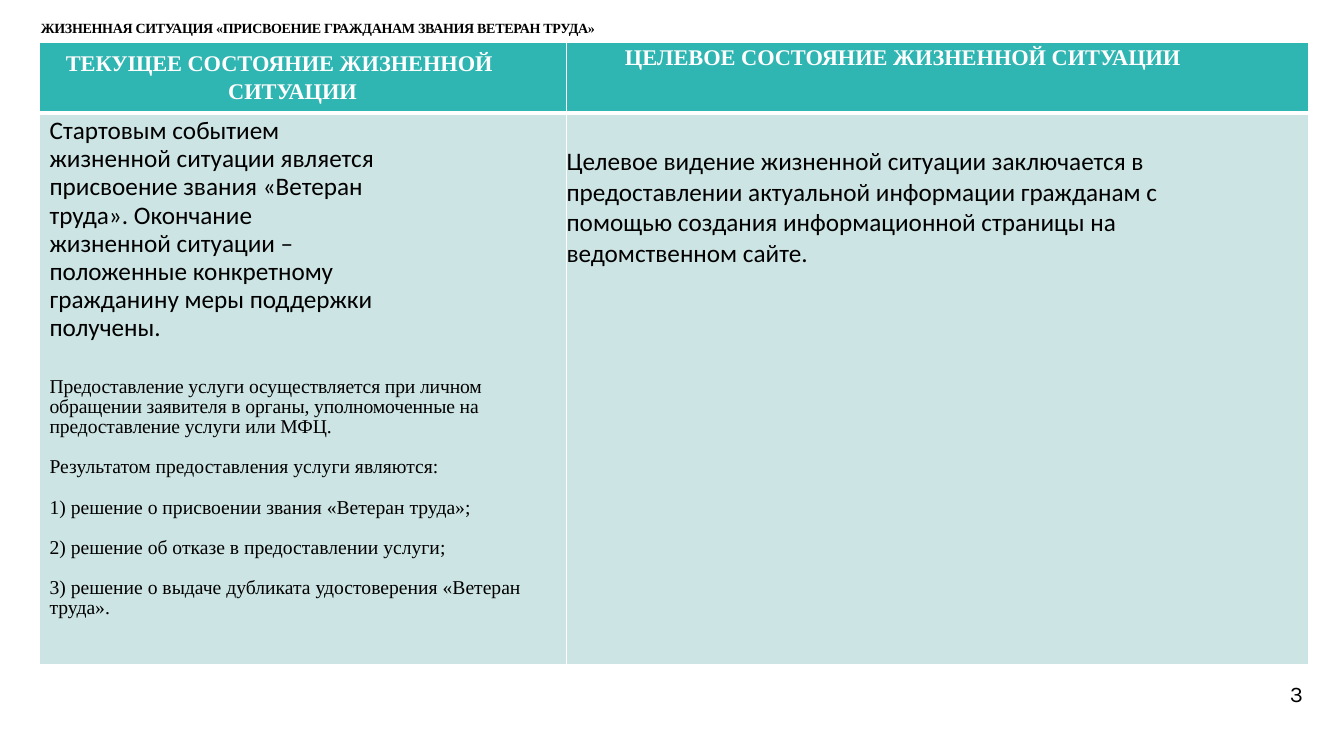
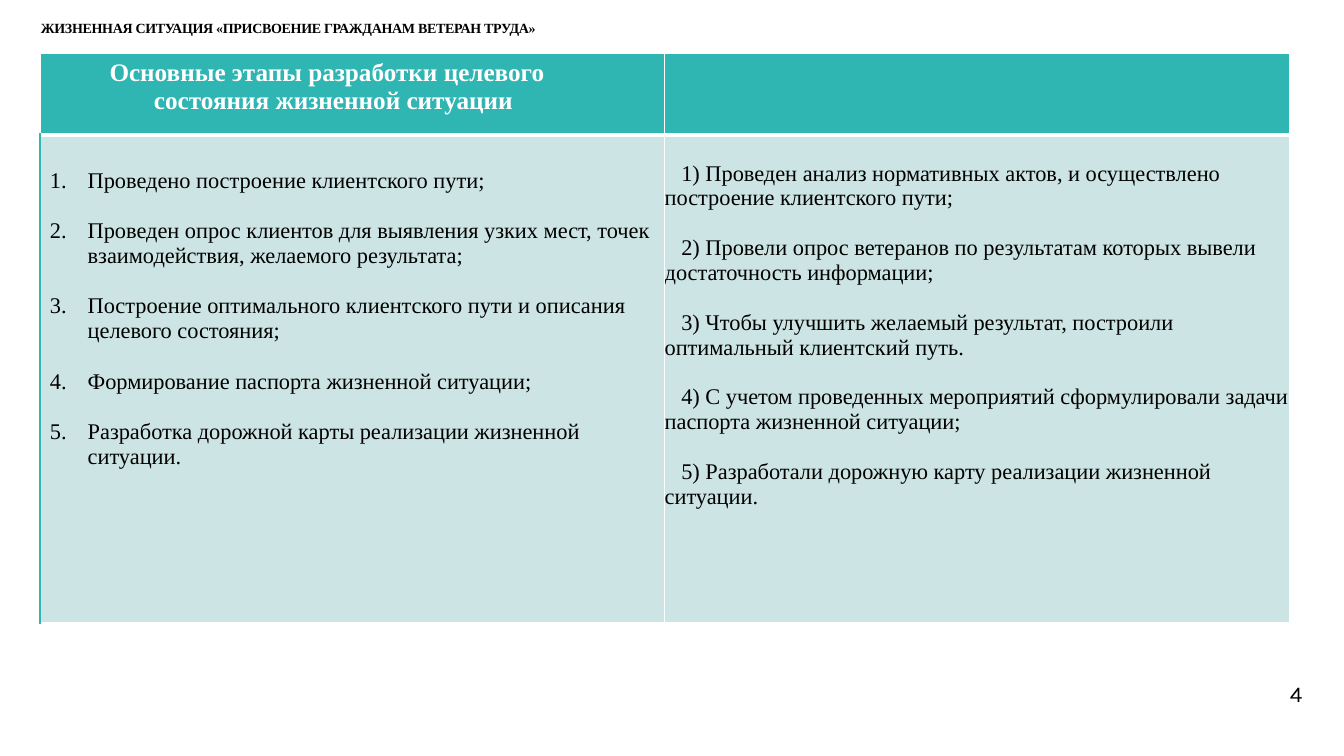
from pptx import Presentation
from pptx.dml.color import RGBColor
from pptx.enum import text as tx
from pptx.oxml import parse_xml
from pptx.oxml.ns import nsdecls
from pptx.util import Cm, Pt

TEAL, PALE, WHITE, BLACK = "2FB5B2", "CCE4E3", "FFFFFF", "000000"
SERIF, SANS, DIGIT = "Times New Roman", "Calibri", "Karla"

# Paragraph styles: lengths in cm; size, line (if above 2) and gap in points
STYLES = {
    "title": dict(size=10, bold=True, left=0.03, track=-20),
    "page": dict(size=16, font=DIGIT, left=0.1, line=18.6),
    "now": dict(size=16, bold=True, color=WHITE, left=4.75, first=-4.09, line=20.2),
    "goal": dict(size=16, bold=True, color=WHITE, left=1.47),
    "steps": dict(size=18, bold=True, color=WHITE, left=2.87, first=-1.12,
                  right=2.8, line=20.2),
    "start": dict(size=18, font=SANS, left=0.25, right=4.7, line=20.1),
    "vision": dict(size=18, font=SANS, right=2.7),
    "service": dict(size=14, left=0.25, line=0.93, gap=24, track=-10),
    "result": dict(size=14, left=0.25, line=0.93, gap=14.4),
    "number": dict(size=16, left=1.2, first=-0.95, gap=18.2, auto=True),
    "done": dict(size=16, first=0.42, gap=17.7),
}

# Each cell: top margin in cm, then (style, text) paragraphs
SLIDES = [
    dict(
        page=3, width=14.25,
        title="ЖИЗНЕННАЯ СИТУАЦИЯ «ПРИСВОЕНИЕ ГРАЖДАНАМ ЗВАНИЯ ВЕТЕРАН ТРУДА»",
        at=(1, 1.07), cols=(13.28, 18.7), rows=(1.78, 13.89), edge=(WHITE, 1),
        cells=[
            [(0.13, [("now", "ТЕКУЩЕЕ СОСТОЯНИЕ ЖИЗНЕННОЙ СИТУАЦИИ")]),
             (0.08, [("goal", "ЦЕЛЕВОЕ СОСТОЯНИЕ ЖИЗНЕННОЙ СИТУАЦИИ")])],
            [(0.13, [
                ("start", "Стартовым событием жизненной ситуации является присвоение "
                          "звания «Ветеран труда». Окончание\vжизненной ситуации – "
                          "положенные конкретному гражданину меры поддержки получены."),
                ("service", "Предоставление услуги осуществляется при личном обращении "
                            "заявителя в органы, уполномоченные на предоставление "
                            "услуги или МФЦ."),
                ("result", "Результатом предоставления услуги являются:"),
                ("result", "1) решение о присвоении звания «Ветеран труда»;"),
                ("result", "2) решение об отказе в предоставлении услуги;"),
                ("result", "3) решение о выдаче дубликата удостоверения «Ветеран труда»."),
            ]),
             (0.84, [
                 ("vision", "Целевое видение жизненной ситуации заключается в "
                            "предоставлении актуальной информации гражданам с помощью "
                            "создания информационной страницы на ведомственном сайте."),
             ])],
        ]),
    dict(
        page=4, width=12.75,
        title="ЖИЗНЕННАЯ СИТУАЦИЯ «ПРИСВОЕНИЕ ГРАЖДАНАМ ВЕТЕРАН ТРУДА»",
        at=(1.01, 1.35), cols=(15.74, 15.74), rows=(2.05, 12.3), edge=(TEAL, 2.25),
        cells=[
            [(0.13, [("steps", "Основные этапы разработки целевого состояния "
                               "жизненной ситуации")]),
             (0, [])],
            [(0.84, [("number", item) for item in (
                "Проведено построение клиентского пути;",
                "Проведен опрос клиентов для выявления узких мест, точек "
                "взаимодействия, желаемого результата;",
                "Построение оптимального клиентского пути и описания "
                "целевого состояния;",
                "Формирование паспорта жизненной ситуации;",
                "Разработка дорожной карты реализации жизненной ситуации.")]),
             (0.66, [("done", item) for item in (
                 "1) Проведен анализ нормативных актов, и осуществлено "
                 "построение клиентского пути;",
                 "2) Провели опрос ветеранов по результатам которых вывели "
                 "достаточность информации;",
                 "3) Чтобы улучшить желаемый результат, построили "
                 "оптимальный клиентский путь.",
                 "4) С учетом проведенных мероприятий сформулировали задачи "
                 "паспорта жизненной ситуации;",
                 "5) Разработали дорожную карту реализации жизненной ситуации.")])],
        ]),
]


def tint(code):
    return RGBColor.from_string(code)


def write(frame, paras):
    """Fill a text frame with styled paragraphs."""
    for n, (name, words) in enumerate(paras):
        look = STYLES[name]
        para = frame.paragraphs[0] if n == 0 else frame.add_paragraph()
        para.text = words
        para.alignment = tx.PP_ALIGN.LEFT
        props = para._p.get_or_add_pPr()
        for key, attr in (("left", "marL"), ("right", "marR"), ("first", "indent")):
            props.set(attr, str(int(Cm(look.get(key, 0)))))
        if look.get("auto"):
            props.append(parse_xml(
                f'<a:buAutoNum {nsdecls("a")} type="arabicPeriod"/>'))
        line = look.get("line", 1.0)
        para.line_spacing = Pt(line) if line > 2 else line
        para.space_before = Pt(look.get("gap", 0) if n else 0)
        for run in para.runs:
            font = run.font
            font.name, font.size = look.get("font", SERIF), Pt(look["size"])
            font.bold = look.get("bold", False)
            font.color.rgb = tint(look.get("color", BLACK))
            run._r.get_or_add_rPr().set("spc", str(look.get("track", 0)))


def bare(frame):
    """Remove the margins and let the text wrap."""
    frame.margin_left = frame.margin_right = 0
    frame.margin_top = frame.margin_bottom = 0
    frame.vertical_anchor = tx.MSO_ANCHOR.TOP
    frame.word_wrap = True


def border(cell, sides):
    """Draw the left, right, top and bottom lines of a cell."""
    props = cell._tc.get_or_add_tcPr()
    for n, (side, (color, width)) in enumerate(zip("LRTB", sides)):
        props.insert(n, parse_xml(
            f'<a:ln{side} {nsdecls("a")} w="{int(Pt(width))}"><a:solidFill>'
            f'<a:srgbClr val="{color}"/></a:solidFill></a:ln{side}>'))


def grid(slide, data):
    """Add the two-column table with a header row."""
    cols, rows = data["cols"], data["rows"]
    box = [Cm(v) for v in (*data["at"], sum(cols), sum(rows))]
    table = slide.shapes.add_table(len(rows), len(cols), *box).table
    table.horz_banding = False
    for col, width in zip(table.columns, cols):
        col.width = Cm(width)
    for row, height in zip(table.rows, rows):
        row.height = Cm(height)
    thin, thick = (WHITE, 1), (WHITE, 3)
    for r, line in enumerate(data["cells"]):
        for c, (top, paras) in enumerate(line):
            cell = table.cell(r, c)
            cell.margin_left = cell.margin_right = cell.margin_bottom = 0
            cell.margin_top = Cm(top)
            cell.fill.solid()
            cell.fill.fore_color.rgb = tint(PALE if r else TEAL)
            left = data["edge"] if r and not c else thin
            border(cell, (left, thin, *((thick, thin) if r else (thin, thick))))
            write(cell.text_frame, paras)


def build(deck, data):
    slide = deck.slides.add_slide(deck.slide_layouts[5])
    # Title
    title = slide.shapes.title
    title.left, title.top = Cm(1), Cm(0.46)
    title.width, title.height = Cm(data["width"]), Cm(0.46)
    bare(title.text_frame)
    title.text_frame.margin_top = Cm(0.03)
    write(title.text_frame, [("title", data["title"])])
    # Table
    grid(slide, data)
    # Page number
    page = slide.shapes.add_textbox(Cm(32.41), Cm(17.15), Cm(0.56), Cm(0.71))
    bare(page.text_frame)
    write(page.text_frame, [("page", str(data["page"]))])


def main():
    deck = Presentation()
    deck.slide_width, deck.slide_height = Cm(33.87), Cm(19.05)
    for data in SLIDES:
        build(deck, data)
    deck.save("out.pptx")


if __name__ == "__main__":
    main()
